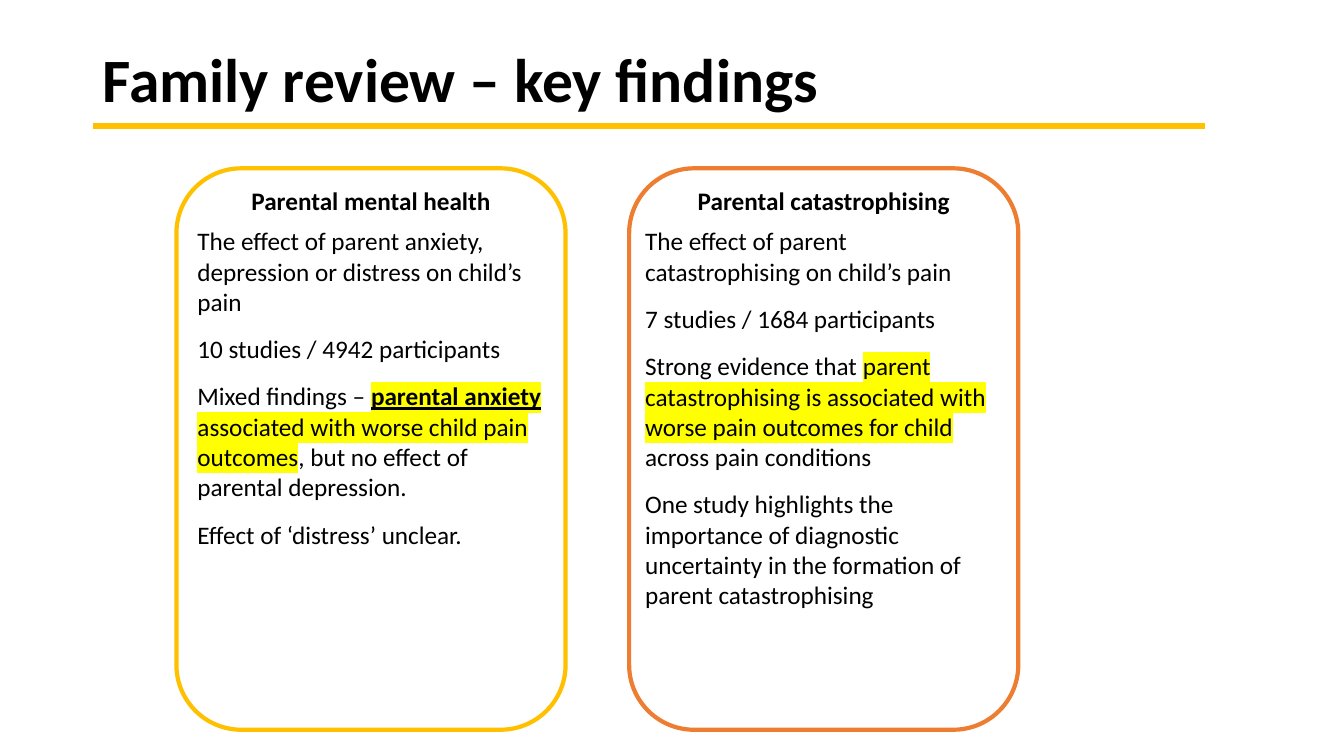
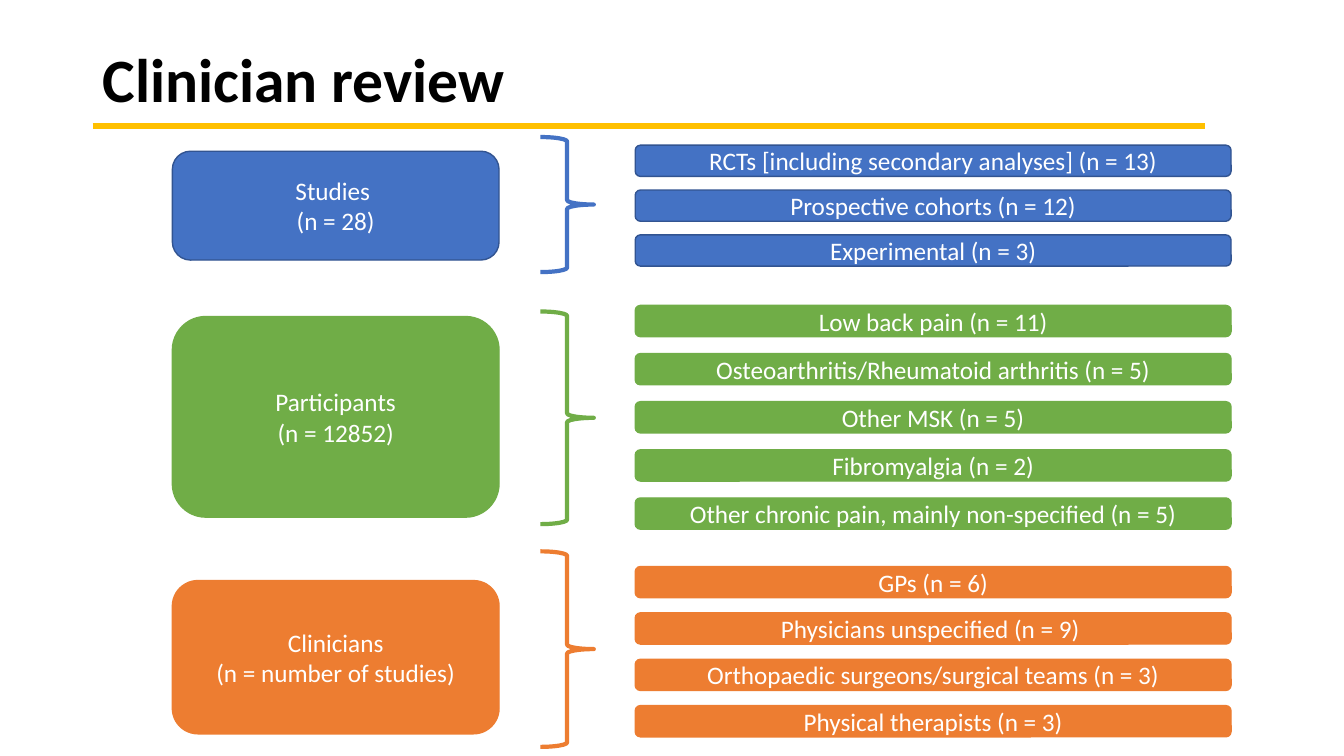
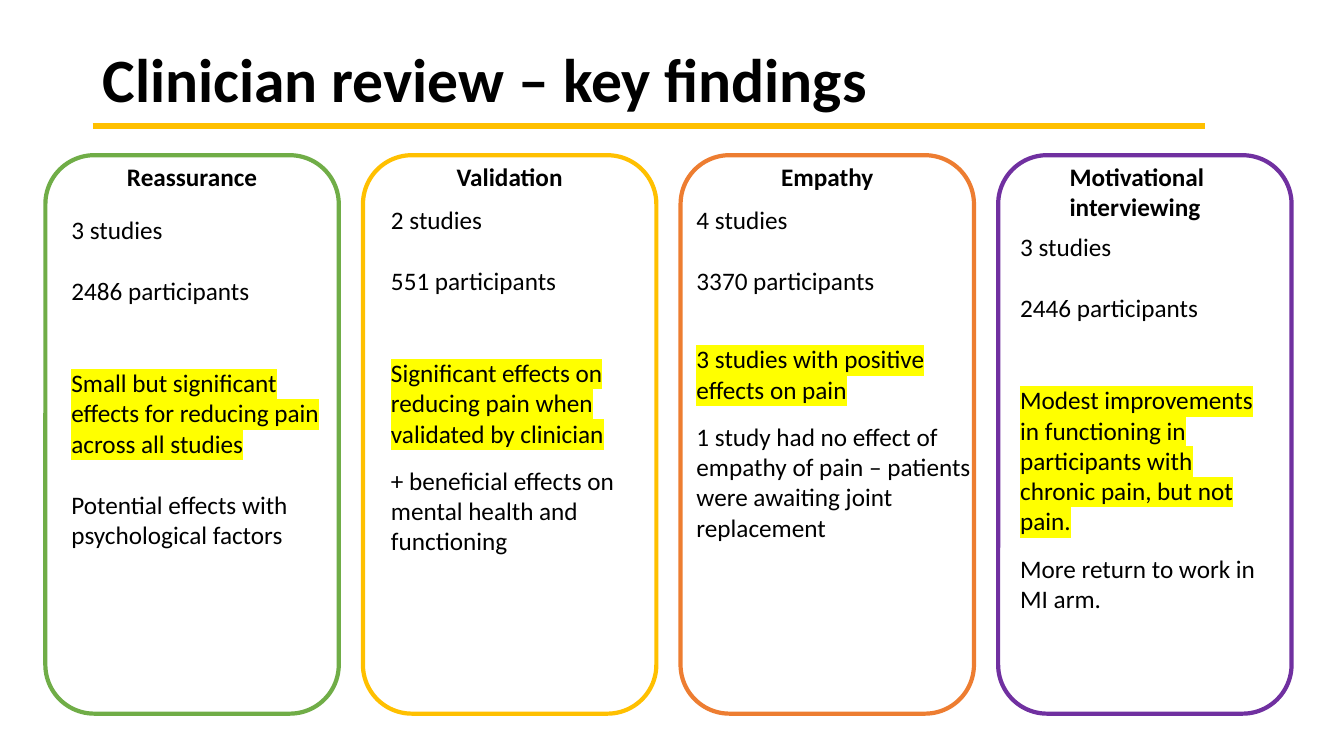
import lxml.etree
import pptx
import pptx.dml.color
import pptx.enum.shapes
import pptx.enum.text
import pptx.oxml.ns
import pptx.util

Inches = pptx.util.Inches
Pt = pptx.util.Pt
SHAPE = pptx.enum.shapes.MSO_SHAPE
ALIGN = pptx.enum.text.PP_ALIGN
ANCHOR = pptx.enum.text.MSO_ANCHOR

BLACK, WHITE, GOLD, ORANGE = "000000", "FFFFFF", "FFC000", "ED7D31"
GREEN, BLUE, NAVY, PURPLE, YELLOW = "70AD47", "4472C4", "325491", "7030A0", "FFFF00"
SMALL_GAP, LINE_GAP = 12.2, 22


def rgb(value):
    return pptx.dml.color.RGBColor.from_string(value)


def add_child(parent, tag):
    return lxml.etree.SubElement(parent, pptx.oxml.ns.qn(tag))


def plain(text, gap=0):
    return gap, [(text, "")]


def marked(text, gap=0):
    return gap, [(text, "mark")]


class Deck:
    font = "Calibri"
    size = 18
    title_size = 44

    def __init__(self):
        self.file = pptx.Presentation()
        self.file.slide_width = Inches(13.33)
        self.file.slide_height = Inches(7.5)
        self.slide = None

    def new_slide(self, title):
        self.slide = self.file.slides.add_slide(self.file.slide_layouts[6])
        frame = self.text([plain(title)], 0.92, 0.09, 11.5, 1.45, size=self.title_size, bold=True)
        frame.vertical_anchor = ANCHOR.MIDDLE
        frame.paragraphs[0].line_spacing = 0.9
        self.rule(0.92, 1.25, 11.95)

    def rule(self, left, top, right):
        rule = self.slide.shapes.add_connector(
            pptx.enum.shapes.MSO_CONNECTOR.STRAIGHT,
            Inches(left), Inches(top), Inches(right), Inches(top))
        rule.line.color.rgb = rgb(GOLD)
        rule.line.width = Pt(4.5)
        add_child(rule._element.spPr, "a:effectLst")

    def fill_text(self, frame, paragraphs, color, align, size, bold):
        frame.word_wrap = True
        for index, (gap, runs) in enumerate(paragraphs):
            paragraph = frame.paragraphs[0] if index == 0 else frame.add_paragraph()
            paragraph.alignment = align
            if gap:
                paragraph.space_before = Pt(gap)
            paragraph.font.name = self.font
            paragraph.font.size = Pt(size)
            paragraph.font.color.rgb = rgb(color)
            paragraph.font.bold = bold
            for words, style in runs:
                run = paragraph.add_run()
                run.text = words
                if "strong" in style:
                    run.font.bold = True
                    run.font.underline = True
                if "mark" in style:
                    highlight = add_child(run._r.get_or_add_rPr(), "a:highlight")
                    add_child(highlight, "a:srgbClr").set("val", YELLOW)

    def text(self, paragraphs, left, top, width, height, align=ALIGN.LEFT, size=size, bold=False):
        box = self.slide.shapes.add_textbox(Inches(left), Inches(top), Inches(width), Inches(height))
        self.fill_text(box.text_frame, paragraphs, BLACK, align, size, bold)
        return box.text_frame

    def shape(self, kind, left, top, width, height, line, weight, fill=None):
        shape = self.slide.shapes.add_shape(
            kind, Inches(left), Inches(top), Inches(width), Inches(height))
        shape.shadow.inherit = False
        shape.line.color.rgb = rgb(line)
        shape.line.width = Pt(weight)
        if fill:
            shape.fill.solid()
            shape.fill.fore_color.rgb = rgb(fill)
        else:
            shape.fill.background()
        return shape

    def label(self, lines, left, top, width, height, fill, line):
        label = self.shape(SHAPE.ROUNDED_RECTANGLE, left, top, width, height, line, 1, fill)
        label.text_frame.vertical_anchor = ANCHOR.MIDDLE
        self.fill_text(label.text_frame, [plain(words) for words in lines],
                       WHITE, ALIGN.CENTER, self.size, False)

    def card(self, frame, color, heading, heading_top, body, body_box, heading_indent=0):
        left, top, width, height = frame
        self.shape(SHAPE.ROUNDED_RECTANGLE, left, top, width, height, color, 3)
        self.text([plain(line) for line in heading], left + heading_indent, heading_top,
                  width - heading_indent, 0.4,
                  ALIGN.LEFT if heading_indent else ALIGN.CENTER, bold=True)
        self.text(body, *body_box)

    def breakdown(self, topic, topic_top, topic_height, brace_top, brace_height,
                  items, first_top, last_top, fill, line):
        self.label(topic, 1.71, topic_top, 3.24, topic_height, fill, line)
        pitch = (last_top - first_top) / (len(items) - 1)
        for index, item in enumerate(items):
            self.label([item], 6.3, first_top + index * pitch, 5.91, 0.31, fill, line)
        self.shape(SHAPE.RIGHT_BRACE, 5.36, brace_top, 0.53, brace_height, fill, 3)


def family_findings(deck):
    deck.new_slide("Family review – key findings")
    mental_health = [
        plain("The effect of parent anxiety, depression or distress on child’s pain"),
        plain("10 studies / 4942 participants", SMALL_GAP),
        (SMALL_GAP, [
            ("Mixed findings – ", ""),
            ("parental anxiety ", "strong mark"),
            ("associated with worse child pain outcomes", "mark"),
            (", but no effect of parental depression.", "")]),
        plain("Effect of ‘distress’ unclear.", SMALL_GAP),
    ]
    catastrophising = [
        plain("The effect of parent catastrophising on child’s pain"),
        plain("7 studies / 1684 participants", SMALL_GAP),
        (SMALL_GAP, [
            ("Strong evidence that ", ""),
            ("parent catastrophising is associated with worse pain outcomes for child ", "mark"),
            ("across pain conditions", "")]),
        plain("One study highlights the importance of diagnostic uncertainty "
              "in the formation of parent catastrophising", SMALL_GAP),
    ]
    deck.card((1.75, 1.67, 3.86, 5.57), GOLD, ["Parental mental health"], 1.79,
              mental_health, (1.86, 2.19, 3.75, 3.33))
    deck.card((6.24, 1.67, 3.86, 5.57), ORANGE, ["Parental catastrophising"], 1.79,
              catastrophising, (6.3, 2.19, 3.79, 4.11))


def clinician_review(deck):
    deck.new_slide("Clinician review")
    deck.breakdown(
        ["Studies ", "(n = 28)"], 1.5, 1.08, 1.36, 1.34,
        ["RCTs [including secondary analyses] (n = 13)", "Prospective cohorts (n = 12)",
         "Experimental (n = 3)"],
        1.44, 2.33, BLUE, NAVY)
    deck.breakdown(
        ["Participants", "(n = 12852)"], 3.14, 1.99, 3.09, 2.11,
        ["Low back pain (n = 11)", "Osteoarthritis/Rheumatoid arthritis (n = 5)",
         "Other MSK (n = 5)", "Fibromyalgia (n = 2)",
         "Other chronic pain, mainly non-specified (n = 5)"],
        3.03, 4.94, GREEN, GREEN)
    deck.breakdown(
        ["Clinicians", "(n = number of studies)"], 5.76, 1.52, 5.47, 1.94,
        ["GPs (n = 6)", "Physicians unspecified (n = 9) ",
         "Orthopaedic surgeons/surgical teams (n = 3)", "Physical therapists (n = 3)"],
        5.62, 7, ORANGE, ORANGE)


def clinician_findings(deck):
    deck.new_slide("Clinician review – key findings")
    approaches = [
        (GREEN, ["Reassurance"], 0, "3 studies", "2486 participants", [
            marked("Small but significant effects for reducing pain across all studies",
                   2 * LINE_GAP),
            plain("Potential effects with psychological factors", LINE_GAP)],
         (0.61, 2.08, 2.75, 3.43)),
        (GOLD, ["Validation"], 0, "2 studies", "551 participants", [
            marked("Significant effects on reducing pain when validated by clinician",
                   2 * LINE_GAP),
            plain("+ beneficial effects on mental health and functioning", SMALL_GAP)],
         (3.78, 1.98, 2.54, 3.6)),
        (ORANGE, ["Empathy"], 0, "4 studies", "3370 participants", [
            marked("3 studies with positive effects on pain", LINE_GAP + SMALL_GAP),
            plain("1 study had no effect of empathy of pain – patients were awaiting "
                  "joint replacement", SMALL_GAP)],
         (6.81, 1.98, 2.97, 3.47)),
        (PURPLE, ["Motivational", "interviewing"], 0.61, "3 studies", "2446 participants", [
            marked("Modest improvements in functioning in participants with chronic pain, "
                   "but not pain.", 2 * LINE_GAP),
            plain("More return to work in MI arm.", SMALL_GAP)],
         (10.02, 2.25, 2.54, 3.9)),
    ]
    for index, (color, heading, indent, studies, people, effects, body_box) in enumerate(approaches):
        body = [plain(studies), plain(people, LINE_GAP)] + effects
        deck.card((0.45 + index * 3.15, 1.54, 2.91, 5.54), color, heading, 1.55,
                  body, body_box, indent)


def main():
    deck = Deck()
    family_findings(deck)
    clinician_review(deck)
    clinician_findings(deck)
    deck.file.save("out.pptx")


if __name__ == "__main__":
    main()
